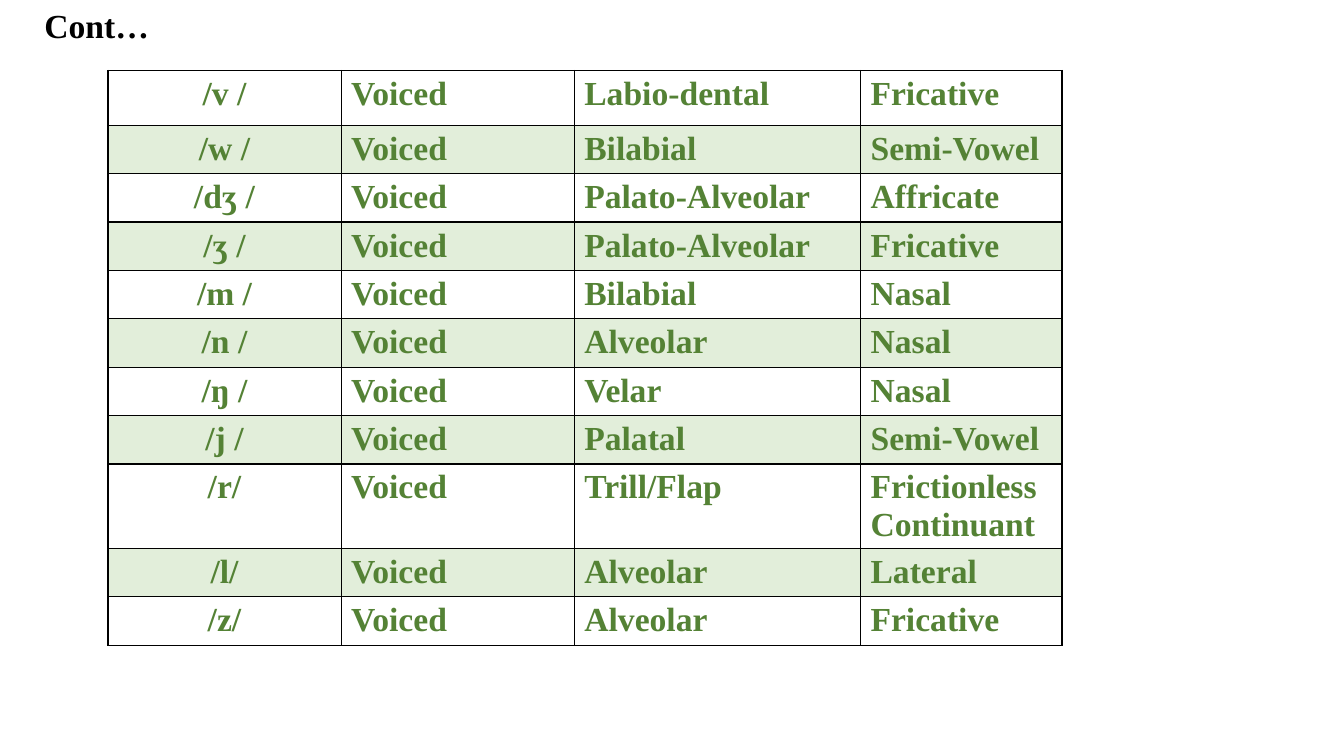
import pptx
import pptx.util
import pptx.dml.color
import pptx.enum.text
import pptx.oxml
import pptx.oxml.ns

ALIGN = pptx.enum.text.PP_ALIGN
ANCHOR = pptx.enum.text.MSO_ANCHOR

SOUNDS = [
    ("/v /", "Labio-dental", "Fricative"),
    ("/w /", "Bilabial", "Semi-Vowel"),
    ("/dʒ /", "Palato-Alveolar", "Affricate"),
    ("/ʒ /", "Palato-Alveolar", "Fricative"),
    ("/m /", "Bilabial", "Nasal"),
    ("/n /", "Alveolar", "Nasal"),
    ("/ŋ /", "Velar", "Nasal"),
    ("/j /", "Palatal", "Semi-Vowel"),
    ("/r/", "Trill/Flap", "Frictionless\nContinuant"),
    ("/l/", "Alveolar", "Lateral"),
    ("/z/", "Alveolar", "Fricative"),
]


def tint(code):
    return pptx.dml.color.RGBColor.from_string(code)


def write(frame, text, font="Times New Roman", size=24, color="000000", bold=True, align=ALIGN.LEFT):
    for i, line in enumerate(text.split("\n")):
        para = frame.paragraphs[0] if i == 0 else frame.add_paragraph()
        para.alignment = align
        run = para.add_run()
        run.text = line
        run.font.name = font
        run.font.size = pptx.util.Pt(size)
        run.font.bold = bold
        run.font.color.rgb = tint(color)


class Deck:
    """Holds the style and the current slide, laid out on a grid of 100 by 100."""

    ink = "548235"
    band = "70AD47"
    rule = "000000"

    def __init__(self):
        self.show = pptx.Presentation()
        self.show.slide_width = pptx.util.Inches(13.33)
        self.show.slide_height = pptx.util.Inches(7.5)
        self.slide = self.show.slides.add_slide(self.show.slide_layouts[5])

    def col(self, count):
        return int(self.show.slide_width * count / 100)

    def row(self, count):
        return int(self.show.slide_height * count / 100)

    def title(self, text, left, top, width, height):
        box = self.slide.shapes.title
        box.left, box.top = self.col(left), self.row(top)
        box.width, box.height = self.col(width), self.row(height)
        box.text_frame.vertical_anchor = ANCHOR.TOP
        write(box.text_frame, text)

    def border(self, cell):
        props = cell._tc.get_or_add_tcPr()
        for i, side in enumerate("LRTB"):
            props.insert(i, pptx.oxml.parse_xml(
                f'<a:ln{side} {pptx.oxml.ns.nsdecls("a")} w="12700"><a:solidFill>'
                f'<a:srgbClr val="{self.rule}"/></a:solidFill></a:ln{side}>'))

    def shade(self, cell, on):
        if not on:
            cell.fill.background()
            return
        cell.fill.solid()
        cell.fill.fore_color.rgb = tint(self.band)
        color = cell._tc.tcPr.find(".//" + pptx.oxml.ns.qn("a:srgbClr"))
        color.append(pptx.oxml.parse_xml(f'<a:alpha {pptx.oxml.ns.nsdecls("a")} val="20000"/>'))

    def table(self, data, left, top, widths, heights):
        frame = self.slide.shapes.add_table(
            len(data), len(widths), self.col(left), self.row(top),
            self.col(sum(widths)), self.row(sum(heights)))
        grid = frame.table
        grid.first_row = grid.horz_banding = False
        for column, width in zip(grid.columns, widths):
            column.width = self.col(width)
        for r, line in enumerate(data):
            grid.rows[r].height = self.row(heights[r])
            for c, text in enumerate(line):
                cell = grid.cell(r, c)
                write(cell.text_frame, text, color=self.ink,
                      align=ALIGN.LEFT if c else ALIGN.CENTER)
                self.shade(cell, r % 2 == 1)
                self.border(cell)


def main():
    deck = Deck()
    deck.title("Cont…", 2.55, 0, 15.15, 6.67)
    data = [(sign, "Voiced", place, manner) for sign, place, manner in SOUNDS]
    heights = [11.1 if "\n" in line[-1] else 6.4 for line in data]
    heights[0] = 7.25
    deck.table(data, 8.03, 9.33, [17.35, 17.35, 21.3, 15], heights)
    deck.show.save("out.pptx")


if __name__ == "__main__":
    main()
